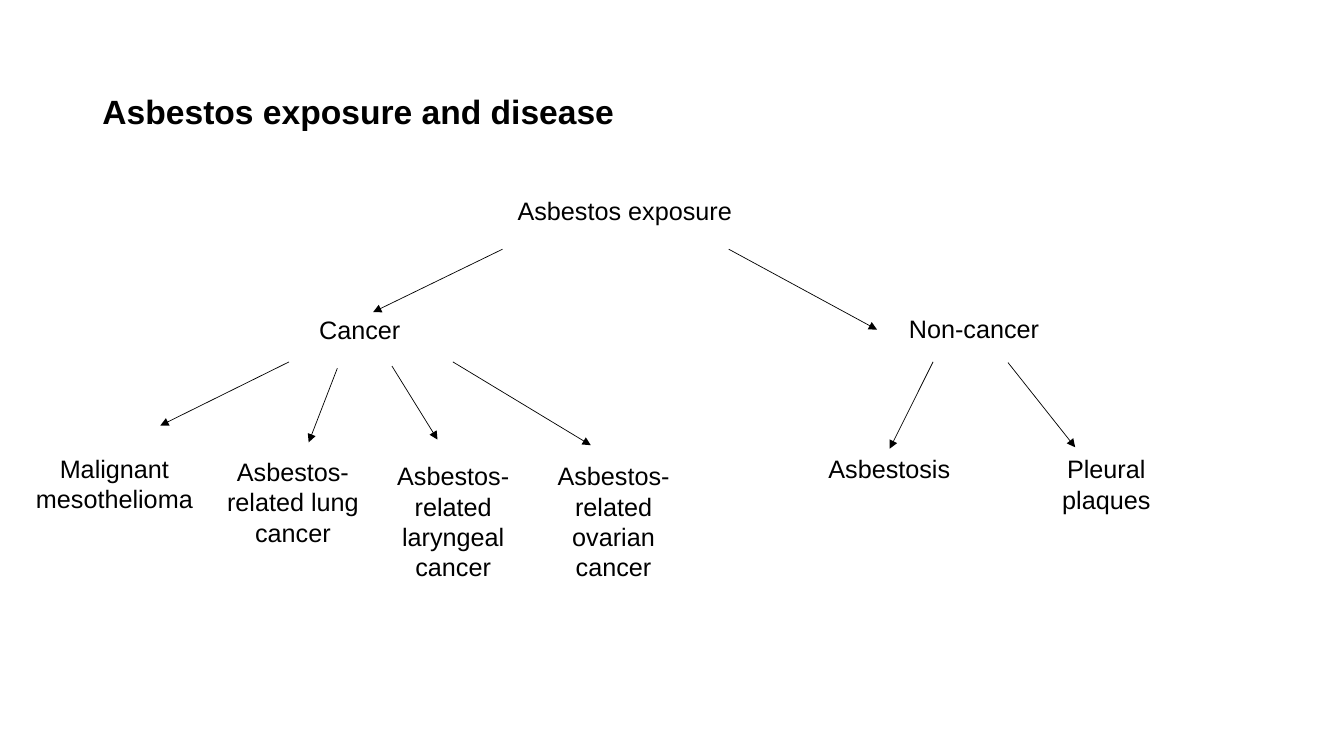
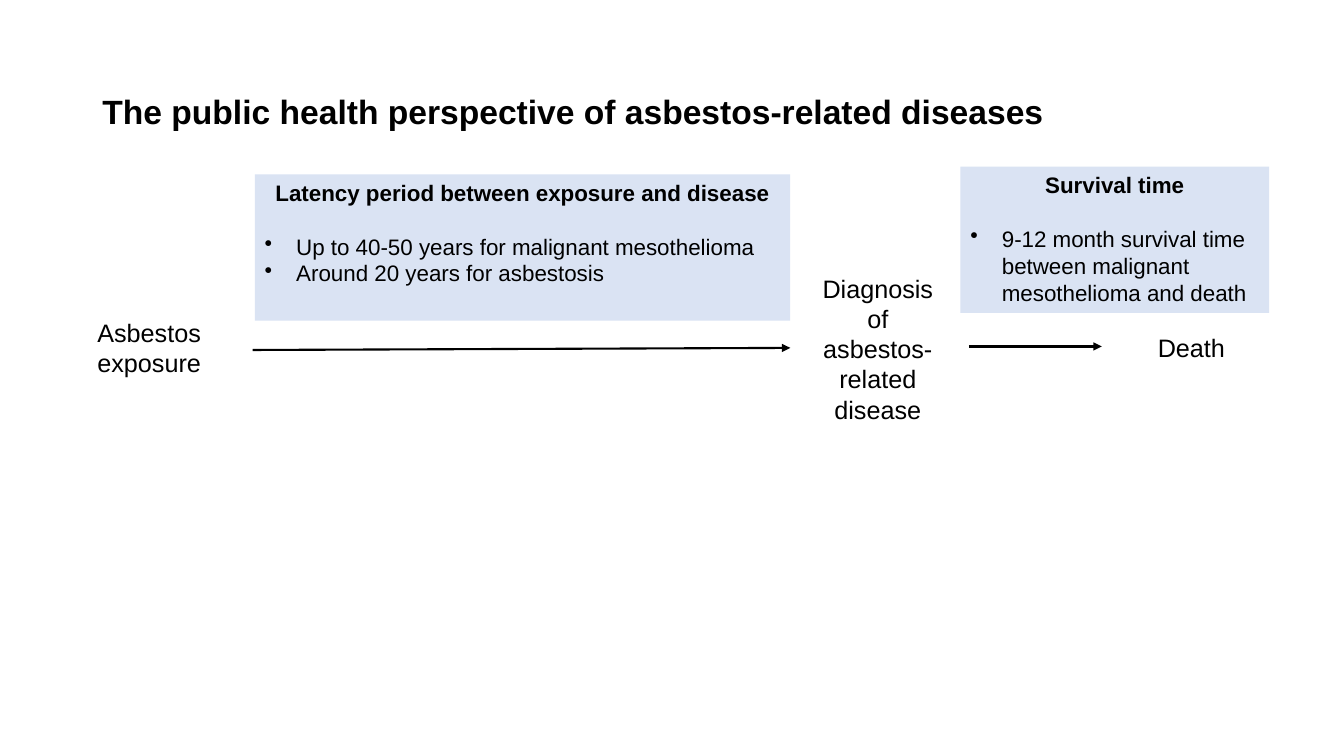
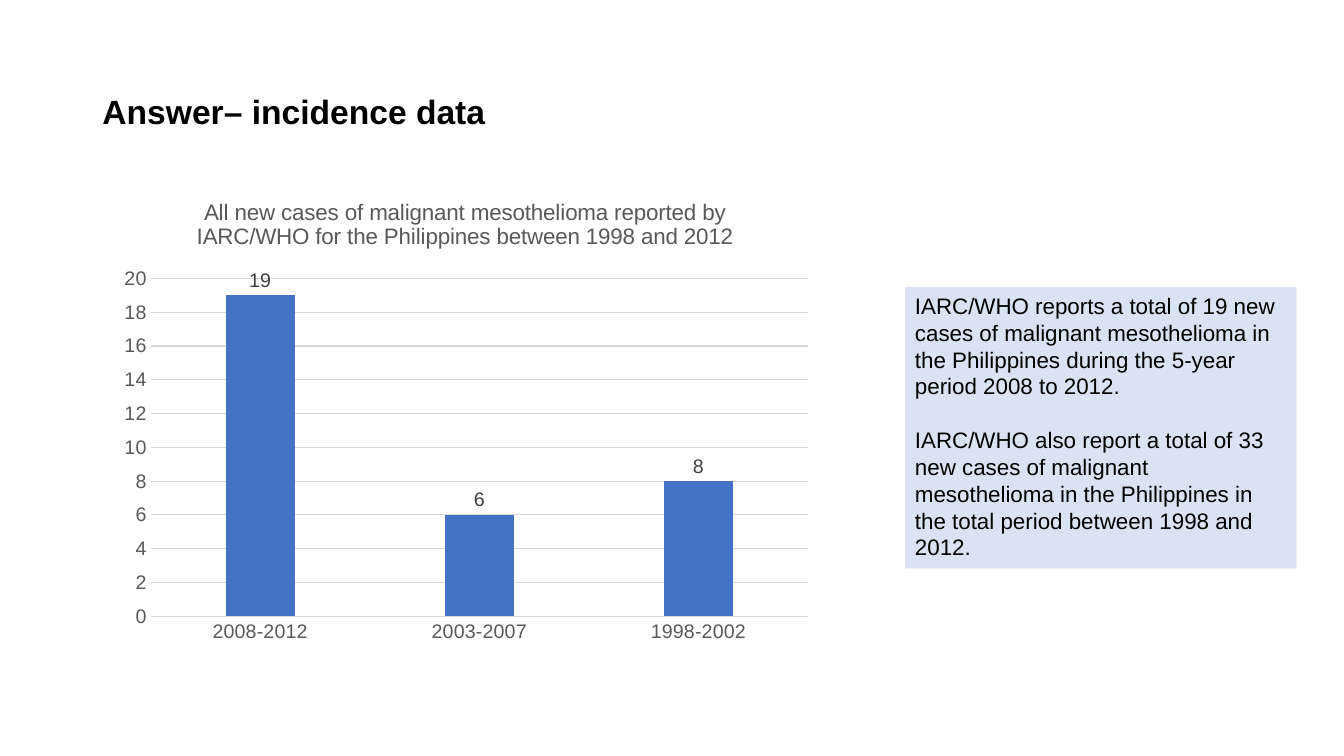
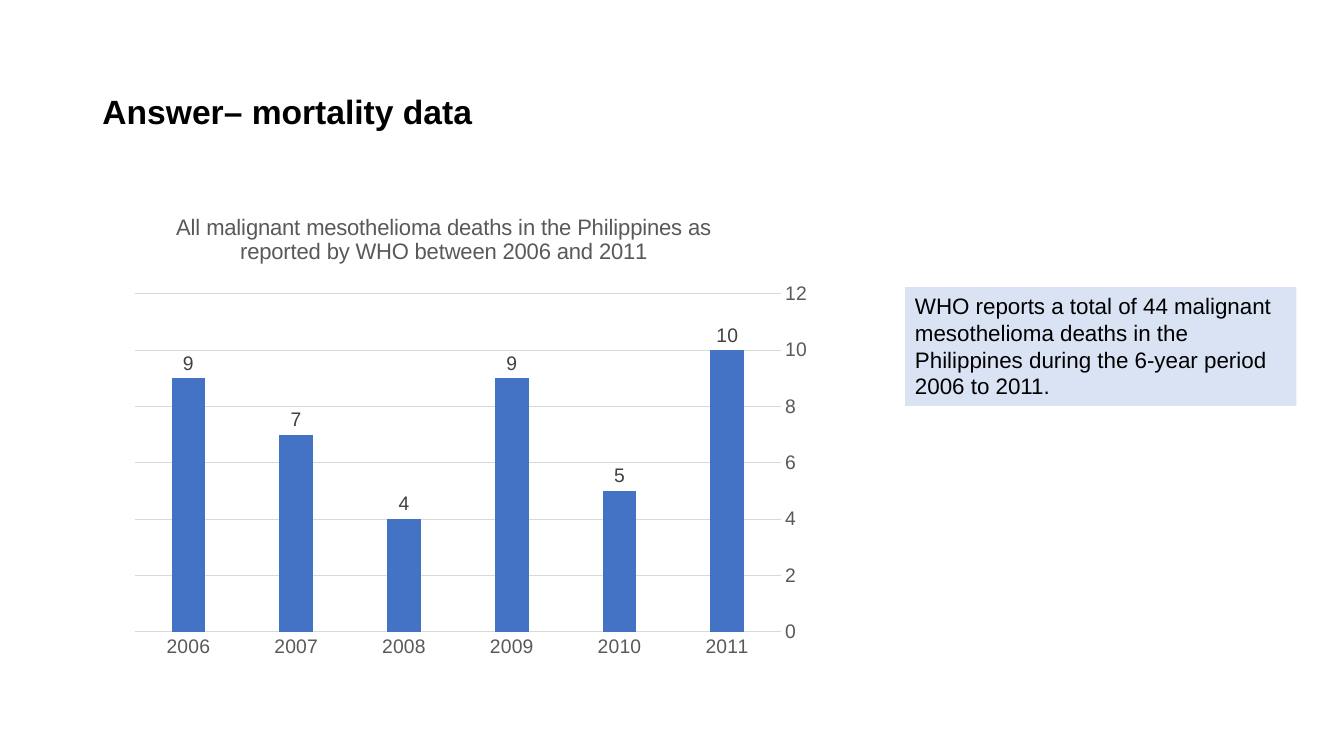
"""Build four slides on asbestos exposure, disease and reported cases."""
from typing import NamedTuple

from pptx import Presentation
from pptx.chart.data import CategoryChartData
from pptx.dml.color import RGBColor
from pptx.enum.chart import XL_AXIS_CROSSES, XL_CHART_TYPE, XL_LABEL_POSITION, XL_TICK_MARK
from pptx.enum.shapes import MSO_CONNECTOR, MSO_SHAPE
from pptx.enum.text import MSO_ANCHOR, MSO_AUTO_SIZE, PP_ALIGN
from pptx.oxml import parse_xml
from pptx.oxml.ns import nsdecls, qn
from pptx.oxml.xmlchemy import OxmlElement
from pptx.slide import Slide
from pptx.text.text import TextFrame
from pptx.util import Pt

LEFT, CENTER = PP_ALIGN.LEFT, PP_ALIGN.CENTER
TOP, MIDDLE = MSO_ANCHOR.TOP, MSO_ANCHOR.MIDDLE
NO_FIT = MSO_AUTO_SIZE.NONE
RECT, STRAIGHT = MSO_SHAPE.RECTANGLE, MSO_CONNECTOR.STRAIGHT
COLUMN, OUTSIDE = XL_CHART_TYPE.COLUMN_CLUSTERED, XL_LABEL_POSITION.OUTSIDE_END
NO_TICK, AT_MAX = XL_TICK_MARK.NONE, XL_AXIS_CROSSES.MAXIMUM

FONT = "Arial"
BLACK, PALE, BLUE = "000000", "DAE3F3", "4472C4"
GRAY, DARK, RULE = "595959", "404040", "D9D9D9"
INDENT = 22.5
GAP = 19


class Label(NamedTuple):
    text: str
    left: float
    top: float
    width: float
    height: float


class Arrow(NamedTuple):
    x1: float
    y1: float
    x2: float
    y2: float


class Line(NamedTuple):
    text: str
    bold: bool = False
    align: PP_ALIGN = LEFT
    bullet: bool = False
    before: float = 0


class Panel(NamedTuple):
    left: float
    top: float
    width: float
    height: float
    lines: list[Line]


class Graph(NamedTuple):
    title: str
    left: float
    top: float
    cats: list[str]
    vals: list[int]
    high: int
    flip: bool = False


LEAF = 127.5
TREE = [
    Label("Cancer", 206.5, 221, 101, 29),
    Label("Non-cancer", 623.5, 220.5, 144.5, 29),
    Label("Asbestos exposure", 339, 136, 214.5, 29),
    Label("Malignant mesothelioma", 18, 320, LEAF, 51),
    Label("Asbestos-related lung cancer", 145.5, 322.5, LEAF, 73),
    Label("Asbestosis", 571.5, 320.5, LEAF, 29),
    Label("Pleural plaques", 726.5, 320.5, LEAF, 51),
    Label("Asbestos-related laryngeal cancer", 260, 325.5, LEAF, 94.5),
    Label("Asbestos-related ovarian cancer", 374.5, 325.5, LEAF, 94.5),
]
BRANCHES = [
    Arrow(359, 178, 266.5, 223),
    Arrow(520.5, 178, 626.5, 235.5),
    Arrow(206.5, 258.5, 114.5, 304),
    Arrow(666.5, 258.5, 635.5, 320.5),
    Arrow(720, 259, 768, 319.5),
    Arrow(241, 263, 220.5, 316),
    Arrow(280, 261.5, 312.5, 314),
    Arrow(323.5, 258.5, 422, 318),
]
STAGES = [
    Label("Asbestos exposure", 56, 223, 101, 51),
    Label("Diagnosis of asbestos-related disease", 576.5, 191.5, 101, 116.5),
    Label("Death", 800.5, 233.5, 101, 29),
]
STEPS = [Arrow(180.5, 250, 564.5, 248.5), Arrow(692, 247.5, 787, 247.5)]
SPANS = [
    Panel(182, 124.5, 382.5, 104.5, [
        Line("Latency period between exposure and disease", True, CENTER),
        Line("Up to 40-50 years for malignant mesothelioma", bullet=True, before=GAP),
        Line("Around 20 years for asbestosis", bullet=True),
    ]),
    Panel(686, 119, 220.5, 104.5, [
        Line("Survival time", True, CENTER),
        Line("9-12 month survival time between malignant mesothelioma and death",
             bullet=True, before=GAP),
    ]),
]
NEW_CASES = Graph(
    "All new cases of malignant mesothelioma reported by IARC/WHO"
    " for the Philippines between 1998 and 2012",
    77, 127.5, ["2008-2012", "2003-2007", "1998-2002"], [19, 6, 8], 20)
CASE_NOTE = Panel(646.5, 205, 279.5, 201, [
    Line("IARC/WHO reports a total of 19 new cases of malignant mesothelioma"
         " in the Philippines during the 5-year period 2008 to 2012."),
    Line("IARC/WHO also report a total of 33 new cases of malignant mesothelioma"
         " in the Philippines in the total period between 1998 and 2012.", before=GAP),
])
DEATHS = Graph(
    "All malignant mesothelioma deaths in the Philippines"
    " as reported by WHO between 2006 and 2011",
    66, 138.5, ["2011", "2010", "2009", "2008", "2007", "2006"],
    [10, 5, 9, 4, 7, 9], 12, True)
DEATH_NOTE = Panel(646.5, 205, 279.5, 85, [
    Line("WHO reports a total of 44 malignant mesothelioma deaths"
         " in the Philippines during the 6-year period 2006 to 2011."),
])


def paint(color: str) -> RGBColor:
    return RGBColor.from_string(color)


def style(font, size: float, color: str, bold: bool = False) -> None:
    font.name, font.size, font.bold = FONT, Pt(size), bold
    font.color.rgb = paint(color)


def write(frame: TextFrame, text: str, *, size: float = 18, color: str = BLACK,
          bold: bool = False, align: PP_ALIGN = LEFT, bullet: bool = False,
          before: float = 0, spacing: float = 1.0) -> None:
    para = frame.paragraphs[0]
    if para.runs:
        para = frame.add_paragraph()
    para.alignment, para.line_spacing = align, spacing
    para.space_before = Pt(before)
    run = para.add_run()
    run.text = text
    style(run.font, size, color, bold)
    if bullet:
        props = para._p.get_or_add_pPr()
        props.set("marL", str(Pt(INDENT)))
        props.set("indent", str(Pt(-INDENT)))
        mark = OxmlElement("a:buChar")
        mark.set("char", "•")
        props.append(mark)


def start(deck, title: str) -> Slide:
    slide = deck.slides.add_slide(deck.slide_layouts[5])
    head = slide.shapes.title
    head.left, head.top, head.width, head.height = Pt(66), Pt(29), Pt(828), Pt(104)
    frame = head.text_frame
    frame.auto_size, frame.vertical_anchor = NO_FIT, MIDDLE
    write(frame, title, size=24, bold=True, spacing=0.9)
    return slide


def add_label(slide: Slide, label: Label) -> None:
    text, *place = label
    frame = slide.shapes.add_textbox(*map(Pt, place)).text_frame
    frame.word_wrap = True
    write(frame, text, align=CENTER)


def add_arrow(slide: Slide, arrow: Arrow, weight: float) -> None:
    link = slide.shapes.add_connector(STRAIGHT, *map(Pt, arrow))
    link.line.width = Pt(weight)
    link.line.color.rgb = paint(BLACK)
    tip = OxmlElement("a:tailEnd")
    tip.set("type", "triangle")
    props = link._element.spPr
    props.find(qn("a:ln")).append(tip)
    props.append(OxmlElement("a:effectLst"))


def add_panel(slide: Slide, panel: Panel) -> None:
    *place, lines = panel
    box = slide.shapes.add_shape(RECT, *map(Pt, place))
    box.shadow.inherit = False
    box.fill.solid()
    box.fill.fore_color.rgb = paint(PALE)
    box.line.fill.background()
    frame = box.text_frame
    frame.word_wrap, frame.vertical_anchor = True, TOP
    for line in lines:
        write(frame, size=16, **line._asdict())


def add_graph(slide: Slide, graph: Graph) -> None:
    data = CategoryChartData()
    data.categories = graph.cats
    data.add_series("Series 1", graph.vals)
    place = map(Pt, (graph.left, graph.top, 510.5, 340))
    chart = slide.shapes.add_chart(COLUMN, *place, data).chart
    style(chart.font, 14, BLACK)
    chart.has_legend = False
    chart.has_title = True
    write(chart.chart_title.text_frame, graph.title, size=16, color=GRAY, align=CENTER)
    chart.chart_title.include_in_layout = False

    plot = chart.plots[0]
    plot.gap_width, plot.overlap, plot.vary_by_categories = 219, -27, False
    fill = plot.series[0].format.fill
    fill.solid()
    fill.fore_color.rgb = paint(BLUE)
    plot.has_data_labels = True
    tags = plot.data_labels
    tags.show_value, tags.position = True, OUTSIDE
    style(tags.font, 14, DARK)

    base, scale = chart.category_axis, chart.value_axis
    for axis in (base, scale):
        axis.major_tick_mark = axis.minor_tick_mark = NO_TICK
        style(axis.tick_labels.font, 14, GRAY)
    scale.minimum_scale, scale.maximum_scale, scale.major_unit = 0, graph.high, 2
    scale.format.line.fill.background()
    for line in (base.format.line, scale.major_gridlines.format.line):
        line.color.rgb = paint(RULE)
        line.width = Pt(0.75)
    if graph.flip:
        base.reverse_order = True
        base.crosses = AT_MAX
    set_plot(chart)


def set_plot(chart) -> None:
    area = chart._chartSpace.chart.plotArea
    for old in area.findall(qn("c:layout")):
        area.remove(old)
    sizes = {"x": 0.06, "y": 0.21, "w": 0.92, "h": 0.71}
    parts = "".join(f'<c:{key} val="{size}"/>' for key, size in sizes.items())
    area.insert(0, parse_xml(
        f'<c:layout {nsdecls("c")}><c:manualLayout><c:layoutTarget val="inner"/>'
        f'<c:xMode val="edge"/><c:yMode val="edge"/>{parts}'
        "</c:manualLayout></c:layout>"))


def add_chart_slide(deck, title: str, graph: Graph, note: Panel) -> None:
    slide = start(deck, title)
    add_graph(slide, graph)
    add_panel(slide, note)


def add_flow(deck, title: str, labels: list[Label], arrows: list[Arrow],
             weight: float, panels: list[Panel]) -> None:
    slide = start(deck, title)
    for label in labels:
        add_label(slide, label)
    for arrow in arrows:
        add_arrow(slide, arrow, weight)
    for panel in panels:
        add_panel(slide, panel)


def main() -> None:
    deck = Presentation()
    deck.slide_width, deck.slide_height = Pt(960), Pt(540)
    add_flow(deck, "Asbestos exposure and disease", TREE, BRANCHES, 0.5, [])
    add_flow(deck, "The public health perspective of asbestos-related diseases",
             STAGES, STEPS, 1.5, SPANS)
    add_chart_slide(deck, "Answer– incidence data", NEW_CASES, CASE_NOTE)
    add_chart_slide(deck, "Answer– mortality data", DEATHS, DEATH_NOTE)
    deck.save("out.pptx")


if __name__ == "__main__":
    main()
